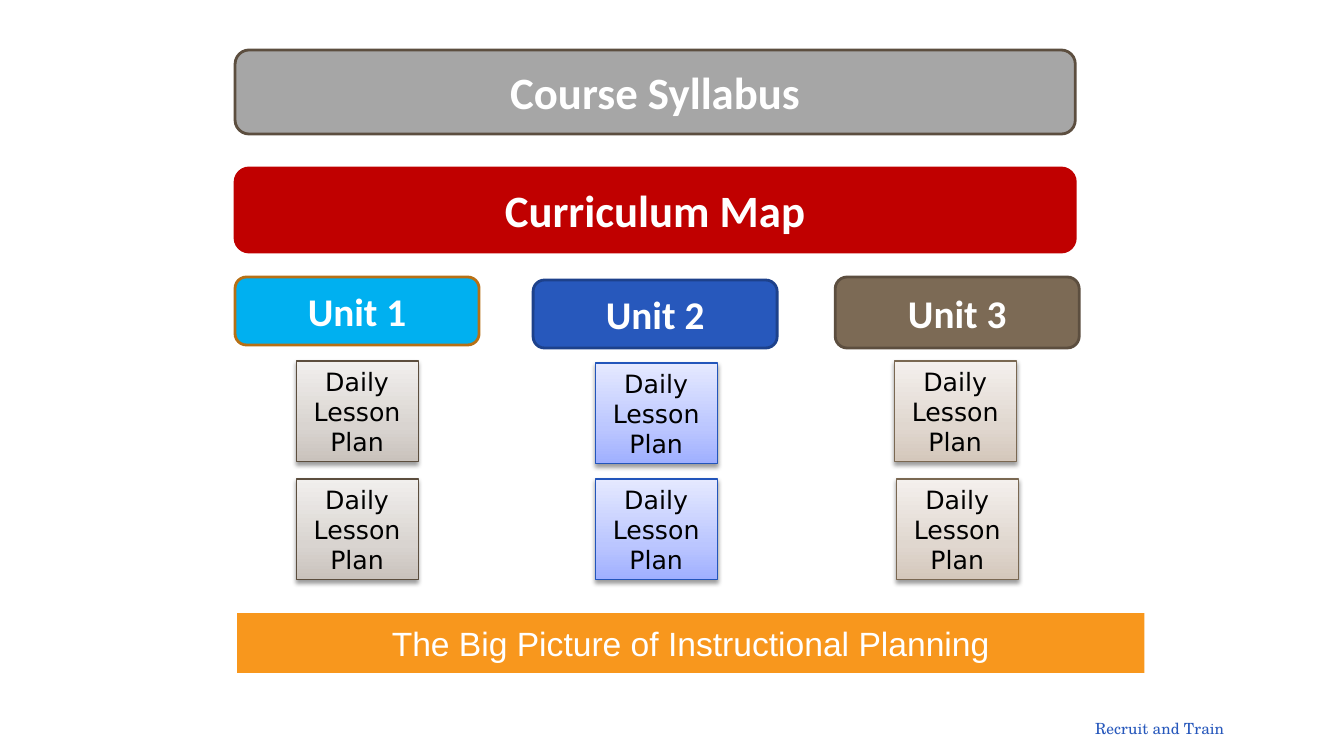
from dataclasses import dataclass
from lxml import etree
from pptx import Presentation
from pptx import util as u
from pptx.dml.color import RGBColor
from pptx.enum import shapes, text
from pptx.oxml.ns import qn

# Content
TITLE = "The Big Picture of Instructional Planning"
FOOTER = "Recruit and Train"
LESSON = ["Daily", "Lesson Plan"]
BANNERS = [  # label, top, fill, line
    ("Course Syllabus", 50, "A6A6A6", "5C4E3F"),
    ("Curriculum Map", 168, "C00000", "C00000"),
]
UNITS = [  # label, box, fill, line, lesson corners, lesson gradient, lesson line
    ("Unit 1", (235, 277, 244, 68), "00B0F0", "B77015",
     [(296, 361), (296, 479)], ("C9C2BC", "D9D4D0", "F1EFED"), "5C4E3E"),
    ("Unit 2", (533, 280, 244, 68), "2758BC", "1D418B",
     [(595, 363), (595, 479)], ("9FAFFF", "BBC6FF", "E5E9FF"), "2255BB"),
    ("Unit 3", (835, 277, 244, 71), "7C6A55", "5C4E3F",
     [(894, 361), (896, 479)], ("D4C7BB", "E0D7CF", "F4F0ED"), "7A6852"),
]


@dataclass(frozen=True)
class Theme:
    white: str = "FFFFFF"
    black: str = "000000"
    orange: str = "F8971D"
    blue: str = "2758BC"
    heading: str = "Calibri"
    banner_size: int = 32
    unit_size: int = 28
    title_size: int = 24
    lesson_size: int = 18
    footer_size: int = 11


T = Theme()
PX = 914400 / 100.8
STOPS = (0, 35, 100)


def px(*values):
    return [u.Emu(round(v * PX)) for v in values]


def write(sp, lines, font, size, color, bold=False, align=text.PP_ALIGN.CENTER):
    tf = sp.text_frame
    tf.word_wrap = True
    tf.auto_size = text.MSO_AUTO_SIZE.NONE
    tf.vertical_anchor = text.MSO_ANCHOR.MIDDLE
    for i, line in enumerate(lines):
        p = tf.add_paragraph() if i else tf.paragraphs[0]
        p.alignment = align
        r = p.add_run()
        r.text = line
        r.font.name, r.font.size, r.font.bold = font, u.Pt(size), bold
        r.font.color.rgb = RGBColor.from_string(color)


def add_box(kind, box, line, width, fill=None):
    sp = s.shapes.add_shape(kind, *px(*box))
    sp.shadow.inherit = False
    sp.line.color.rgb = RGBColor.from_string(line)
    sp.line.width = u.Pt(width)
    if fill:
        sp.fill.solid()
        sp.fill.fore_color.rgb = RGBColor.from_string(fill)
    return sp


def add_heading(label, box, fill, line, size):
    sp = add_box(shapes.MSO_SHAPE.ROUNDED_RECTANGLE, box, line, 2, fill)
    write(sp, [label], T.heading, size, T.white, bold=True)


def shade(sp, colors):
    """Three-stop gradient from the bottom up, with a soft shadow below."""
    sp.fill.gradient()
    sp.fill.gradient_angle = 90
    stops = sp._element.spPr.find(".//" + qn("a:gsLst"))
    for old in list(stops):
        stops.remove(old)
    for pos, color in zip(STOPS, colors):
        gs = etree.SubElement(stops, qn("a:gs"), pos=str(pos * 1000))
        etree.SubElement(gs, qn("a:srgbClr"), val=color)
    effects = sp._element.spPr.find(qn("a:effectLst"))
    shadow = etree.SubElement(effects, qn("a:outerShdw"), blurRad="40000",
                              dist="20000", dir="5400000", rotWithShape="0")
    color = etree.SubElement(shadow, qn("a:srgbClr"), val=T.black)
    etree.SubElement(color, qn("a:alpha"), val="38000")


prs = Presentation()
prs.slide_width, prs.slide_height = u.Inches(13.33), u.Inches(7.5)
s = prs.slides.add_slide(prs.slide_layouts[5])

# Title bar
title = s.shapes.title
title.left, title.top, title.width, title.height = px(237, 613, 907, 60)
title.fill.solid()
title.fill.fore_color.rgb = RGBColor.from_string(T.orange)
write(title, [TITLE], "Arial", T.title_size, T.white)

# Course banners
for label, top, fill, line in BANNERS:
    add_heading(label, (235, top, 840, 84), fill, line, T.banner_size)

# Units with their daily lessons
for label, box, fill, line, corners, colors, edge in UNITS:
    add_heading(label, box, fill, line, T.unit_size)
    for corner in corners:
        lesson = add_box(shapes.MSO_SHAPE.RECTANGLE, (*corner, 122, 101), edge, 0.75)
        shade(lesson, colors)
        write(lesson, LESSON, "DejaVu Sans", T.lesson_size, T.black)

# Footer
footer = s.shapes.add_textbox(*px(771, 706, 463, 45))
write(footer, [FOOTER], "TeX Gyre Schola", T.footer_size, T.blue,
      align=text.PP_ALIGN.RIGHT)

prs.save("out.pptx")
